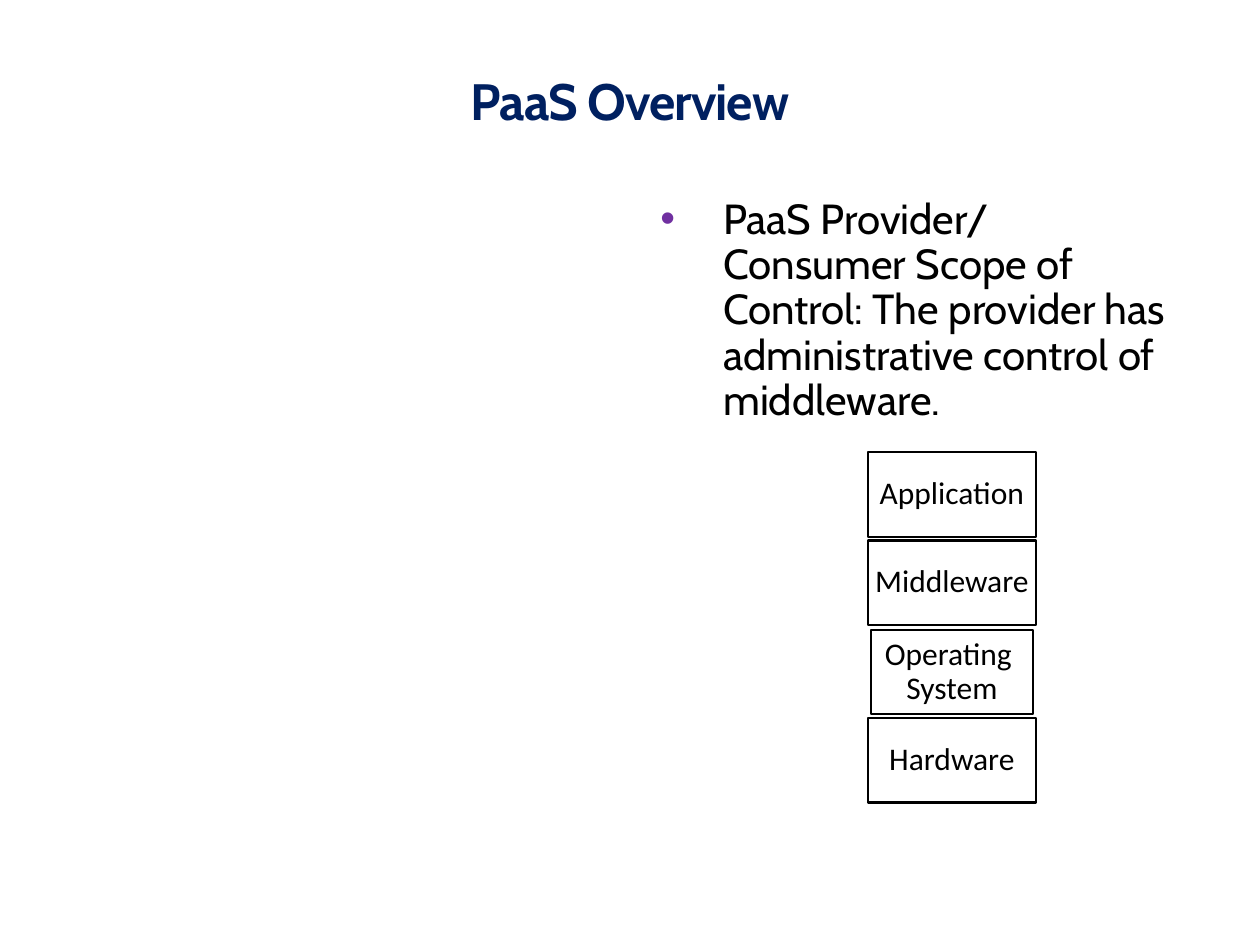
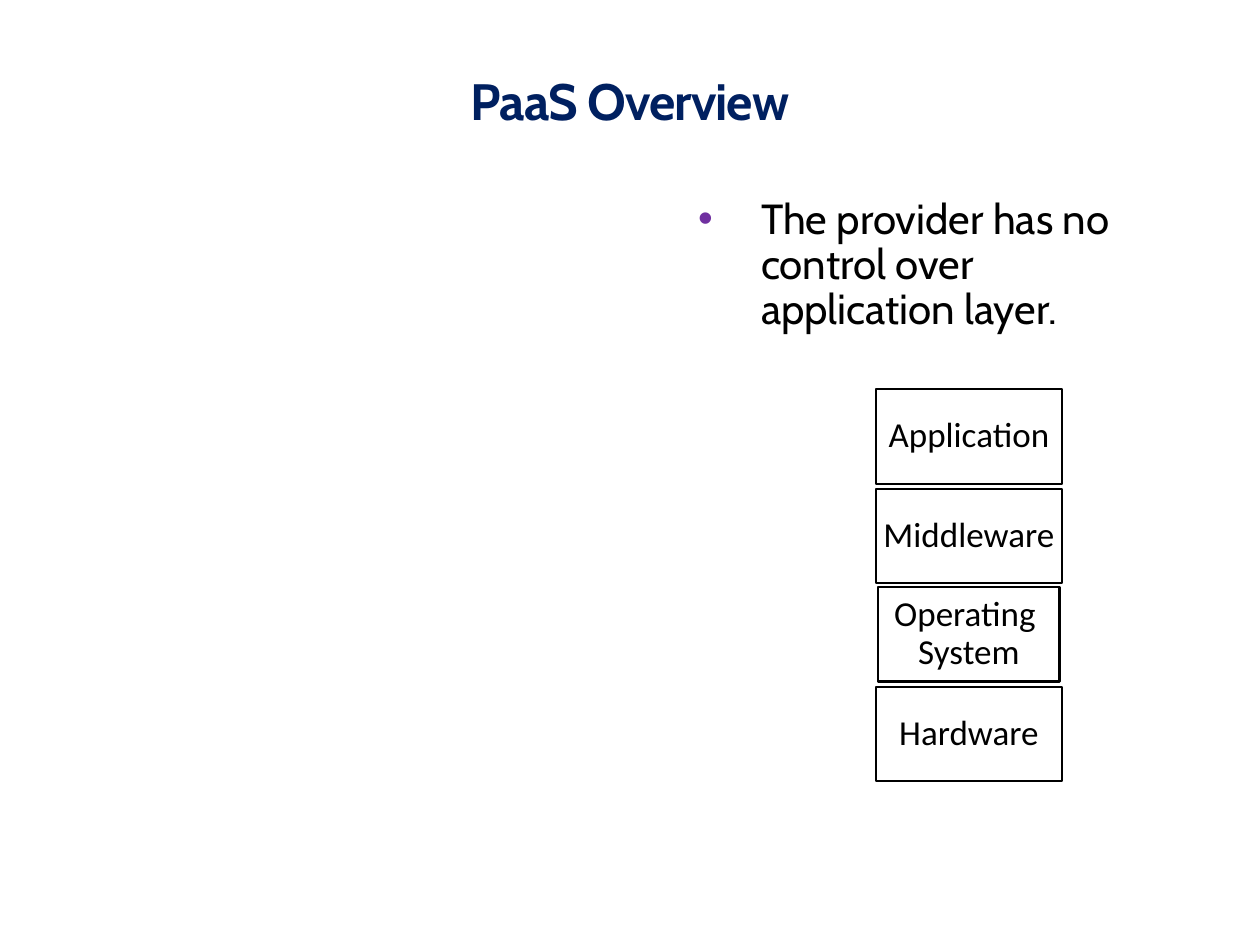
import dataclasses

import lxml.etree
import pptx
import pptx.dml.color
import pptx.enum.shapes
import pptx.enum.text
import pptx.oxml.ns
import pptx.util

EMU_PER_PX = 9144
PAGE_WIDTH, PAGE_HEIGHT = 1000, 750
COLORS = {"title": "002060", "text": "000000", "line": "000000",
          "box": "FFFFFF", "bullet": "7030A0"}
HEADING_FONT = "Cabin"
BOX_FONT = "Calibri"
TITLE = "PaaS Overview"


@dataclasses.dataclass(frozen=True)
class Layer:
    name: str
    inset: int = 0


@dataclasses.dataclass(frozen=True)
class Stack:
    center: int
    top: int
    last_top: int
    width: int
    height: int
    padding: int
    font_size: int


@dataclasses.dataclass(frozen=True)
class Page:
    statement: str
    body_left: int
    stack: Stack


LAYERS = [Layer("Application"), Layer("Middleware"),
          Layer("Operating \vSystem", 2), Layer("Hardware")]

PAGES = [
    Page("PaaS Provider/ Consumer Scope of Control: The provider has "
         "administrative control of middleware.",
         487, Stack(755, 359, 570, 133, 67, 5, 18)),
    Page("The provider has no control over application layer.",
         517, Stack(769, 309, 545, 148, 75, 6, 20)),
]


def px(length: int) -> pptx.util.Emu:
    return pptx.util.Emu(length * EMU_PER_PX)


def color(name: str) -> pptx.dml.color.RGBColor:
    return pptx.dml.color.RGBColor.from_string(COLORS[name])


def place(shape, left: int, top: int, width: int, height: int) -> None:
    shape.left, shape.top = px(left), px(top)
    shape.width, shape.height = px(width), px(height)


def set_margins(frame, horizontal: int, vertical: int) -> None:
    frame.margin_left = frame.margin_right = px(horizontal)
    frame.margin_top = frame.margin_bottom = px(vertical)


def format_runs(para, font_name: str, size: float, color_name: str, bold: bool = False) -> None:
    for span in para.runs:
        span.font.name = font_name
        span.font.size = pptx.util.Pt(size)
        span.font.bold = bold
        span.font.color.rgb = color(color_name)


def add_bullet(para, margin: int, indent: int) -> None:
    properties = para._p.get_or_add_pPr()
    properties.set("marL", str(px(margin)))
    properties.set("indent", str(px(indent)))
    qualified = pptx.oxml.ns.qn
    bullet_color = lxml.etree.SubElement(properties, qualified("a:buClr"))
    lxml.etree.SubElement(bullet_color, qualified("a:srgbClr"), val=COLORS["bullet"])
    lxml.etree.SubElement(properties, qualified("a:buFont"), typeface="Arial")
    lxml.etree.SubElement(properties, qualified("a:buChar"), char="•")


def write_title(title) -> None:
    place(title, 0, 34, PAGE_WIDTH, 75)
    frame = title.text_frame
    frame.text = TITLE
    frame.auto_size = pptx.enum.text.MSO_AUTO_SIZE.NONE
    frame.vertical_anchor = pptx.enum.text.MSO_ANCHOR.BOTTOM
    para = frame.paragraphs[0]
    para.alignment = pptx.enum.text.PP_ALIGN.CENTER
    para.line_spacing = 0.85
    format_runs(para, HEADING_FONT, 29.2, "title", bold=True)
    for span in para.runs:
        span.font._element.set("spc", "-50")


def write_statement(body, page: Page) -> None:
    place(body, page.body_left, 152, 925 - page.body_left, 422)
    frame = body.text_frame
    frame.text = page.statement
    frame.auto_size = pptx.enum.text.MSO_AUTO_SIZE.NONE
    set_margins(frame, 0, 5)
    para = frame.paragraphs[0]
    para.level = 2
    para.line_spacing = 0.9
    para.space_before = pptx.util.Pt(0)
    para.space_after = pptx.util.Pt(4)
    add_bullet(para, 87, -50)
    format_runs(para, HEADING_FONT, 24, "text")


def draw_stack(slide, stack: Stack) -> None:
    group = slide.shapes.add_group_shape()
    distance = stack.last_top - stack.top
    for index, layer in enumerate(LAYERS):
        top = stack.top + round(distance * index / (len(LAYERS) - 1))
        width = stack.width - 2 * layer.inset
        box = group.shapes.add_shape(
            pptx.enum.shapes.MSO_SHAPE.RECTANGLE,
            px(stack.center - width // 2), px(top), px(width), px(stack.height))
        box.shadow.inherit = False
        box.fill.solid()
        box.fill.fore_color.rgb = color("box")
        box.line.color.rgb = color("line")
        box.line.width = pptx.util.Pt(1.25)
        frame = box.text_frame
        frame.text = layer.name
        frame.word_wrap = False
        frame.vertical_anchor = pptx.enum.text.MSO_ANCHOR.MIDDLE
        set_margins(frame, stack.padding, stack.padding)
        para = frame.paragraphs[0]
        para.alignment = pptx.enum.text.PP_ALIGN.CENTER
        para.line_spacing = 0.9
        format_runs(para, BOX_FONT, stack.font_size, "text")


def main() -> None:
    deck = pptx.Presentation()
    deck.slide_width, deck.slide_height = px(PAGE_WIDTH), px(PAGE_HEIGHT)
    for page in PAGES:
        slide = deck.slides.add_slide(deck.slide_layouts[1])
        write_title(slide.shapes.title)
        write_statement(slide.placeholders[1], page)
        draw_stack(slide, page.stack)
    deck.save("out.pptx")


if __name__ == "__main__":
    main()
